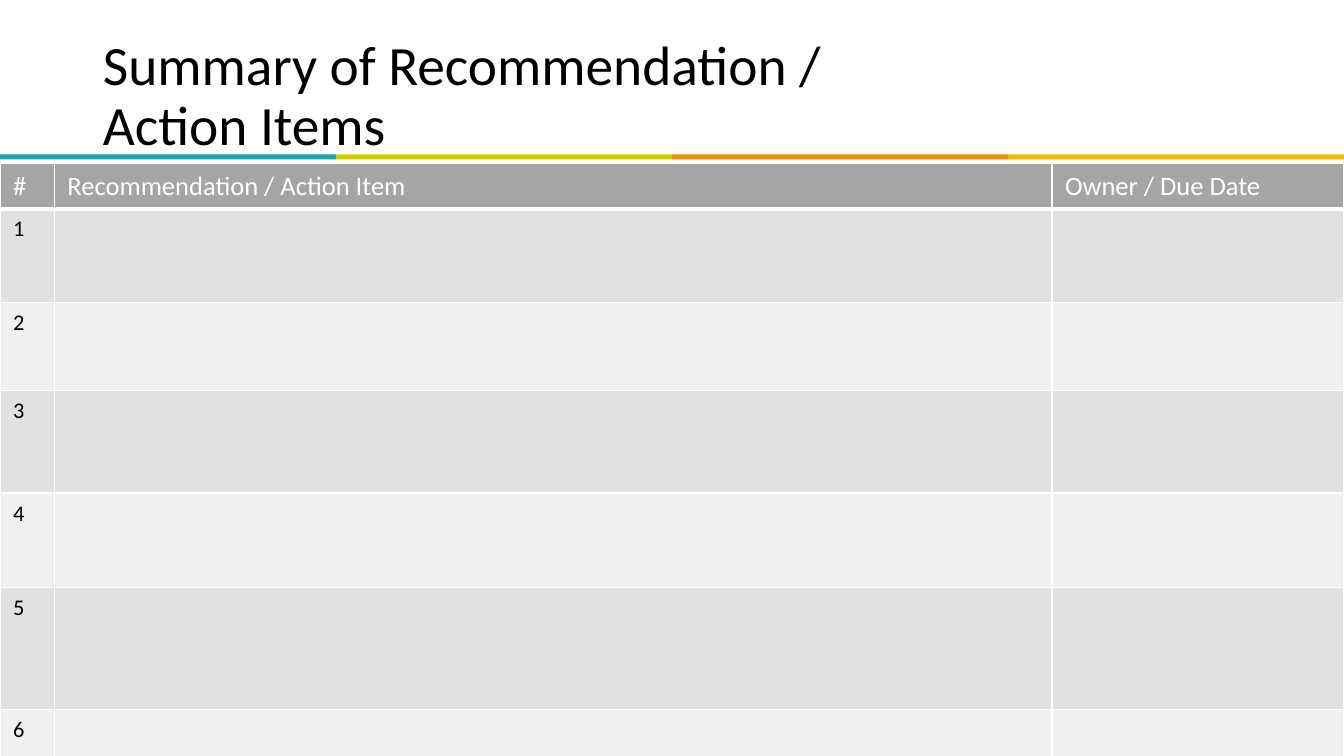
from dataclasses import dataclass

from lxml import etree
from pptx import Presentation
from pptx.dml.color import RGBColor
from pptx.enum.shapes import MSO_SHAPE
from pptx.enum.text import MSO_ANCHOR, MSO_AUTO_SIZE, PP_ALIGN
from pptx.oxml.ns import qn
from pptx.util import Cm, Pt

RECTANGLE = MSO_SHAPE.RECTANGLE
MIDDLE = MSO_ANCHOR.MIDDLE
NO_AUTOFIT = MSO_AUTO_SIZE.NONE
LEFT = PP_ALIGN.LEFT

FONT = "Calibri"
BLACK, WHITE = "000000", "FFFFFF"
SLIDE_WIDTH, SLIDE_HEIGHT = 33.87, 19.05
STRIPE_COLOURS = ["1BA3AB", "D3CD00", "EE8E03", "F4B900"]
HEADINGS = ["#", "Recommendation / Action Item", "Owner / Due Date"]
COLUMN_WIDTHS = [1.37, 25.14, 7.36]
HEADER_HEIGHT = 1.12
ITEM_HEIGHTS = [2.36, 2.21, 2.59, 2.39, 3.07, 3.38]


@dataclass
class RowStyle:
    fill: str
    text_colour: str
    text_size: float
    bottom_border: float


HEADER = RowStyle("A5A5A5", WHITE, 19, 3)
ITEM_STYLES = [RowStyle("E1E1E1", BLACK, 16, 1), RowStyle("F0F0F0", BLACK, 16, 1)]


def colour(hex_code: str) -> RGBColor:
    return RGBColor.from_string(hex_code)


def format_text(paragraph, size: float, hex_code: str) -> None:
    for font in [paragraph.font] + [run.font for run in paragraph.runs]:
        font.name = FONT
        font.size = Pt(size)
        font.bold = False
        font.color.rgb = colour(hex_code)


def add_border(cell, side: str, width: float) -> None:
    properties = cell._tc.get_or_add_tcPr()
    line = etree.SubElement(properties, qn(f"a:ln{side}"), w=str(Pt(width)))
    fill = etree.SubElement(line, qn("a:solidFill"))
    etree.SubElement(fill, qn("a:srgbClr"), val=WHITE)


def fill_cell(cell, text: str, style: RowStyle) -> None:
    for side in "LRT":
        add_border(cell, side, 1)
    add_border(cell, "B", style.bottom_border)
    cell.fill.solid()
    cell.fill.fore_color.rgb = colour(style.fill)
    cell.margin_left = cell.margin_right = Cm(0.33)
    cell.margin_top = cell.margin_bottom = Cm(0.17)
    cell.text_frame.text = text
    format_text(cell.text_frame.paragraphs[0], style.text_size, style.text_colour)


def add_stripes(slide) -> None:
    width = SLIDE_WIDTH / len(STRIPE_COLOURS)
    for index, hex_code in enumerate(STRIPE_COLOURS):
        stripe = slide.shapes.add_shape(
            RECTANGLE, Cm(index * width), Cm(3.89), Cm(width), Cm(0.13))
        stripe.shadow.inherit = False
        stripe.fill.solid()
        stripe.fill.fore_color.rgb = colour(hex_code)
        stripe.line.fill.background()


def set_title(slide) -> None:
    title = slide.shapes.title
    title.left, title.top = Cm(2.34), Cm(1.02)
    title.width, title.height = Cm(21.11), Cm(2.87)
    frame = title.text_frame
    frame.text = "Summary of Recommendation / Action Items"
    frame.word_wrap = True
    frame.auto_size = NO_AUTOFIT
    frame.vertical_anchor = MIDDLE
    paragraph = frame.paragraphs[0]
    paragraph.alignment = LEFT
    paragraph.line_spacing = 0.9
    format_text(paragraph, 39.6, BLACK)


def add_action_table(slide) -> None:
    heights = [HEADER_HEIGHT] + ITEM_HEIGHTS
    table = slide.shapes.add_table(
        len(heights), len(HEADINGS), Cm(0), Cm(4.11),
        Cm(SLIDE_WIDTH), Cm(sum(heights))).table
    for column, width in zip(table.columns, COLUMN_WIDTHS):
        column.width = Cm(width)
    for number, (row, height) in enumerate(zip(table.rows, heights)):
        row.height = Cm(height)
        texts = [str(number), "", ""] if number else HEADINGS
        style = ITEM_STYLES[(number - 1) % 2] if number else HEADER
        for cell, text in zip(row.cells, texts):
            fill_cell(cell, text, style)


def main() -> None:
    presentation = Presentation()
    presentation.slide_width = Cm(SLIDE_WIDTH)
    presentation.slide_height = Cm(SLIDE_HEIGHT)
    # Title Only layout
    slide = presentation.slides.add_slide(presentation.slide_layouts[5])

    # Heading and coloured rule
    set_title(slide)
    add_stripes(slide)

    # Action items
    add_action_table(slide)
    presentation.save("out.pptx")


if __name__ == "__main__":
    main()
